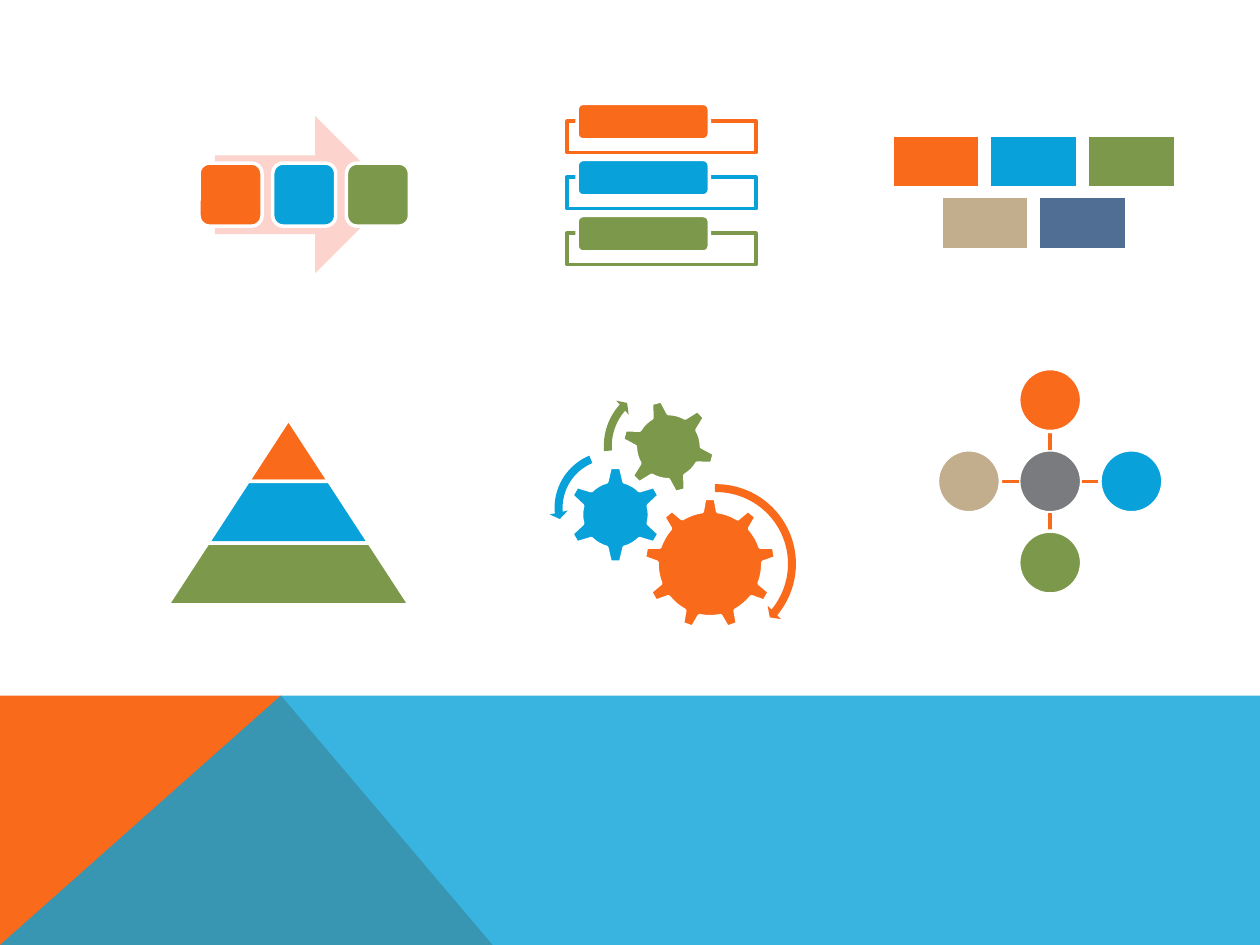
from math import cos, radians, sin

from pptx import Presentation
from pptx.dml.color import RGBColor
from pptx.enum.shapes import MSO_CONNECTOR, MSO_SHAPE
from pptx.oxml.ns import qn
from pptx.util import Inches, Pt
from lxml.etree import SubElement

ORANGE, BLUE, GREEN = "F96A1B", "08A1D9", "7C984A"
TAN, NAVY, GRAY, WHITE, PINK = "C2AD8D", "506E94", "797B7E", "FFFFFF", "FDD4CD"
TRIO = (ORANGE, BLUE, GREEN)


def color(hex_text):
    return RGBColor.from_string(hex_text)


def paint(shape, fill, line=None, opacity=100):
    shape.shadow.inherit = False
    shape.fill.solid()
    shape.fill.fore_color.rgb = color(fill)
    if opacity < 100:
        tint = shape.fill._xPr.find(qn("a:solidFill"))[0]
        SubElement(tint, qn("a:alpha"), val=str(opacity * 1000))
    if line:
        shape.line.color.rgb = color(line)
        shape.line.width = Pt(2)
    else:
        shape.line.fill.background()


def add_part(page, kind, left, top, width, height, fill,
             line=WHITE, opacity=100, adjust=(), turn=0):
    part = page.shapes.add_shape(kind, Inches(left), Inches(top),
                                 Inches(width), Inches(height))
    paint(part, fill, line, opacity)
    for index, value in enumerate(adjust):
        part.adjustments[index] = value
    part.rotation = turn
    return part


def add_spoke(page, start_x, start_y, end_x, end_y):
    spoke = page.shapes.add_connector(
        MSO_CONNECTOR.STRAIGHT, Inches(start_x), Inches(start_y),
        Inches(end_x), Inches(end_y))
    spoke.line.color.rgb = color(ORANGE)
    spoke.line.width = Pt(2)
    SubElement(spoke._element.spPr, qn("a:effectLst"))


def add_polygon(page, points, fill, opacity=100):
    corners = [(Inches(x), Inches(y)) for x, y in points]
    builder = page.shapes.build_freeform(*corners[0])
    builder.add_line_segments(corners[1:], close=True)
    paint(builder.convert_to_shape(), fill, opacity=opacity)


def footer_band(page, left, top, width, height):
    right, bottom, peak = left + width, top + height, left + 2.23
    add_polygon(page, [(left, bottom), (left, top), (peak, top),
                       (left + 3.91, bottom)], ORANGE)
    add_polygon(page, [(left, bottom), (peak, top), (right, top),
                       (right, bottom)], BLUE, opacity=80)


def block_grid(page, left, top, width, height):
    block_width, block_height = 0.7, 0.42
    step = (width - block_width) / 2
    rows = ((0, 0, TRIO), (step / 2, height - block_height, (TAN, NAVY)))
    for indent, drop, fills in rows:
        for column, fill in enumerate(fills):
            add_part(page, MSO_SHAPE.RECTANGLE, left + indent + column * step,
                     top + drop, block_width, block_height, fill)


def tab_list(page, left, top, width, height):
    frame_height, drop = 0.25, 0.14
    step = (height - drop - frame_height) / 2
    for row, fill in enumerate(TRIO):
        row_top = top + row * step
        add_part(page, MSO_SHAPE.RECTANGLE, left, row_top + drop, width,
                 frame_height, WHITE, line=fill, opacity=90)
        add_part(page, MSO_SHAPE.ROUNDED_RECTANGLE, left + 0.08, row_top,
                 width * 0.7, 0.29, fill)


def arrow_process(page, left, top, width, height):
    arrow_width, side = 1.42, 0.5
    add_part(page, MSO_SHAPE.RIGHT_ARROW, left + (width - arrow_width) / 2,
             top, arrow_width, height, PINK, line=None)
    step = (width - side) / 2
    for column, fill in enumerate(TRIO):
        add_part(page, MSO_SHAPE.ROUNDED_RECTANGLE, left + column * step,
                 top + (height - side) / 2, side, side, fill)


def radial_cycle(page, left, top, width, height):
    size = 0.5
    center_x, center_y = left + width / 2, top + height / 2
    reach = (width - size) / 2

    def add_circle(x, y, fill):
        add_part(page, MSO_SHAPE.OVAL, x - size / 2, y - size / 2,
                 size, size, fill)

    add_circle(center_x, center_y, GRAY)
    for angle, fill in zip((-90, 0, 90, 180), (*TRIO, TAN)):
        across, down = cos(radians(angle)), sin(radians(angle))
        inner, outer = size / 2, reach - size / 2
        add_spoke(page, center_x + inner * across, center_y + inner * down,
                  center_x + outer * across, center_y + outer * down)
        add_circle(center_x + reach * across, center_y + reach * down, fill)


def gear_train(page, left, top):
    # Gears: kind, offset from the box, size, fill, rotation
    gears = (
        (MSO_SHAPE.GEAR_9, 0.75, 0.94, 1.05, ORANGE, 0),
        (MSO_SHAPE.GEAR_6, 0.14, 0.69, 0.77, BLUE, 0),
        (MSO_SHAPE.GEAR_6, 0.57, 0.16, 0.75, GREEN, 345),
    )
    for kind, across, down, size, fill, turn in gears:
        add_part(page, kind, left + across, top + down, size, size, fill,
                 turn=turn)
    # Turning arrows: kind, offset from the box, size, fill, adjustments
    arrows = (
        (MSO_SHAPE.CIRCULAR_ARROW, 0.65, 0.79, 1.35, ORANGE,
         (0.047, 2.99, 23.995, 161.405, 0.055)),
        (MSO_SHAPE.LEFT_CIRCULAR_ARROW, 0, 0.53, 0.98, BLUE,
         (0.065, 4.3, 104.891, 148.378, 0.075)),
        (MSO_SHAPE.CIRCULAR_ARROW, 0.39, 0, 1.06, GREEN,
         (0.06, 3.941, 133.138, 105.082, 0.07)),
    )
    for kind, across, down, size, fill, adjust in arrows:
        add_part(page, kind, left + across, top + down, size, size, fill,
                 line=None, adjust=adjust)


def pyramid(page, left, top, width, height):
    tier_height = height / 3
    for tier, fill in enumerate(TRIO):
        tier_width = width * (tier + 1) / 3
        add_part(page, MSO_SHAPE.TRAPEZOID, left + (width - tier_width) / 2,
                 top + tier * tier_height, tier_width, tier_height, fill,
                 adjust=(0.651,))


def main():
    deck = Presentation()
    deck.slide_width, deck.slide_height = Inches(10), Inches(7.5)
    page = deck.slides.add_slide(deck.slide_layouts[6])
    footer_band(page, 0, 5.52, 10, 1.98)
    # Upper row of diagrams
    block_grid(page, 7.08, 1.07, 2.25, 0.91)
    tab_list(page, 4.5, 0.82, 1.5, 1.28)
    arrow_process(page, 1.58, 0.92, 1.67, 1.25)
    # Lower row of diagrams
    radial_cycle(page, 7.44, 2.92, 1.79, 1.8)
    gear_train(page, 4.36, 3.01)
    pyramid(page, 1.33, 3.33, 1.92, 1.47)
    deck.save("out.pptx")


if __name__ == "__main__":
    main()
